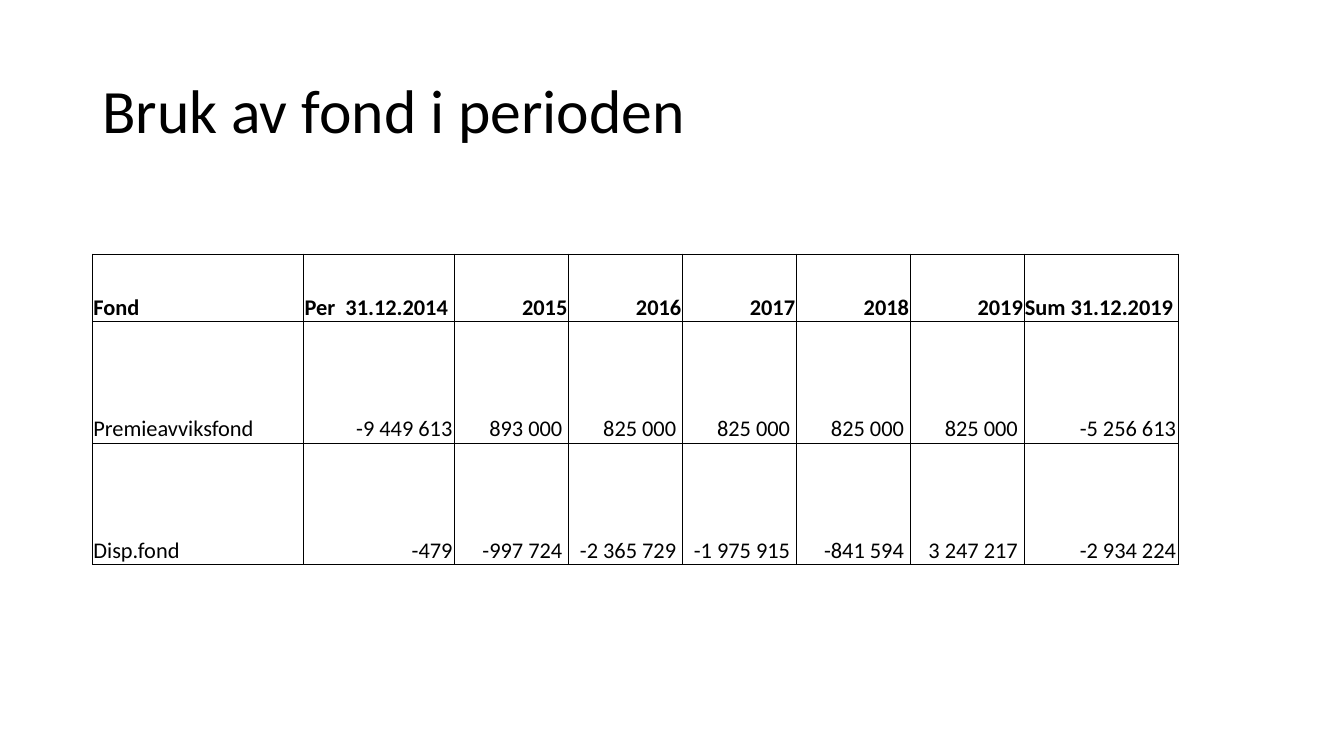
from lxml.etree import SubElement
from pptx import Presentation
from pptx.dml.color import RGBColor
from pptx.enum.text import MSO_ANCHOR as ANCHOR, PP_ALIGN as ALIGN
from pptx.oxml.ns import qn
from pptx.util import Inches, Pt

COLORS = {"text": "000000", "line": "000000"}
GRID_COLS, GRID_ROWS = 160, 90
LEFT = 11

COL_WIDTHS = [25.15, 17.95] + [13.56] * 5 + [18.35]
ROW_HEIGHTS = [8, 14.5, 14.5]
YEAR_COLS = range(2, 7)
FUNDS = [
    ["Fond", "Per  31.12.2014", "2015", "2016", "2017", "2018", "2019", "Sum 31.12.2019"],
    ["Premieavviksfond", "-9 449 613", "893 000", "825 000", "825 000", "825 000",
     "825 000", "-5 256 613"],
    ["Disp.fond", "-479", "-997 724", "-2 365 729", "-1 975 915", "-841 594",
     "3 247 217", "-2 934 224"],
]


class SlideBuilder:
    font = "Calibri"

    def __init__(self, prs):
        self.slide = prs.slides.add_slide(prs.slide_layouts[6])
        self.col = prs.slide_width / GRID_COLS
        self.row = prs.slide_height / GRID_ROWS

    def box(self, left, top, width, height):
        return (int(left * self.col), int(top * self.row),
                int(width * self.col), int(height * self.row))

    def format(self, p, size, bold=False, align=ALIGN.LEFT):
        p.alignment = align
        for r in p.runs:
            r.font.name = self.font
            r.font.size = Pt(size)
            r.font.bold = bold
            r.font.color.rgb = RGBColor.from_string(COLORS["text"])

    def title(self, text, *grid):
        tf = self.slide.shapes.add_textbox(*self.box(*grid)).text_frame
        tf.word_wrap = True
        tf.vertical_anchor = ANCHOR.MIDDLE
        p = tf.paragraphs[0]
        p.text = text
        p.line_spacing = 0.9
        self.format(p, 44)

    def borders(self, cell):
        props = cell._tc.get_or_add_tcPr()
        for i, side in enumerate(("lnL", "lnR", "lnT", "lnB")):
            line = props.makeelement(qn(f"a:{side}"), {"w": str(Pt(0.5))})
            fill = SubElement(line, qn("a:solidFill"))
            SubElement(fill, qn("a:srgbClr"), val=COLORS["line"])
            props.insert(i, line)

    def cell(self, cell, text, bold, align, right_margin):
        cell.fill.background()
        cell.vertical_anchor = ANCHOR.BOTTOM
        cell.margin_left = cell.margin_top = Inches(0.01)
        cell.margin_right = Inches(right_margin)
        cell.margin_bottom = 0
        p = cell.text_frame.paragraphs[0]
        p.text = text
        self.format(p, 16, bold, align)
        self.borders(cell)

    def table(self, rows, left, top, widths, heights):
        grid = self.box(left, top, sum(widths), sum(heights))
        table = self.slide.shapes.add_table(len(rows), len(widths), *grid).table
        table.first_row = table.horz_banding = False
        for column, width in zip(table.columns, widths):
            column.width = int(width * self.col)
        for i, (row, height) in enumerate(zip(rows, heights)):
            table.rows[i].height = int(height * self.row)
            header = i == 0
            for j, text in enumerate(row):
                year = j in YEAR_COLS
                right = year or (j > 0 and not header)
                margin = 0.01 if header else 0.06 if year else 0.02
                self.cell(table.cell(i, j), text, header,
                          ALIGN.RIGHT if right else ALIGN.LEFT, margin)


def main():
    prs = Presentation()
    prs.slide_width, prs.slide_height = Inches(13.33), Inches(7.5)
    s = SlideBuilder(prs)
    s.title("Bruk av fond i perioden", LEFT, 4.8, 138, 17.4)
    s.table(FUNDS, LEFT, 30.24, COL_WIDTHS, ROW_HEIGHTS)
    prs.save("out.pptx")


if __name__ == "__main__":
    main()
